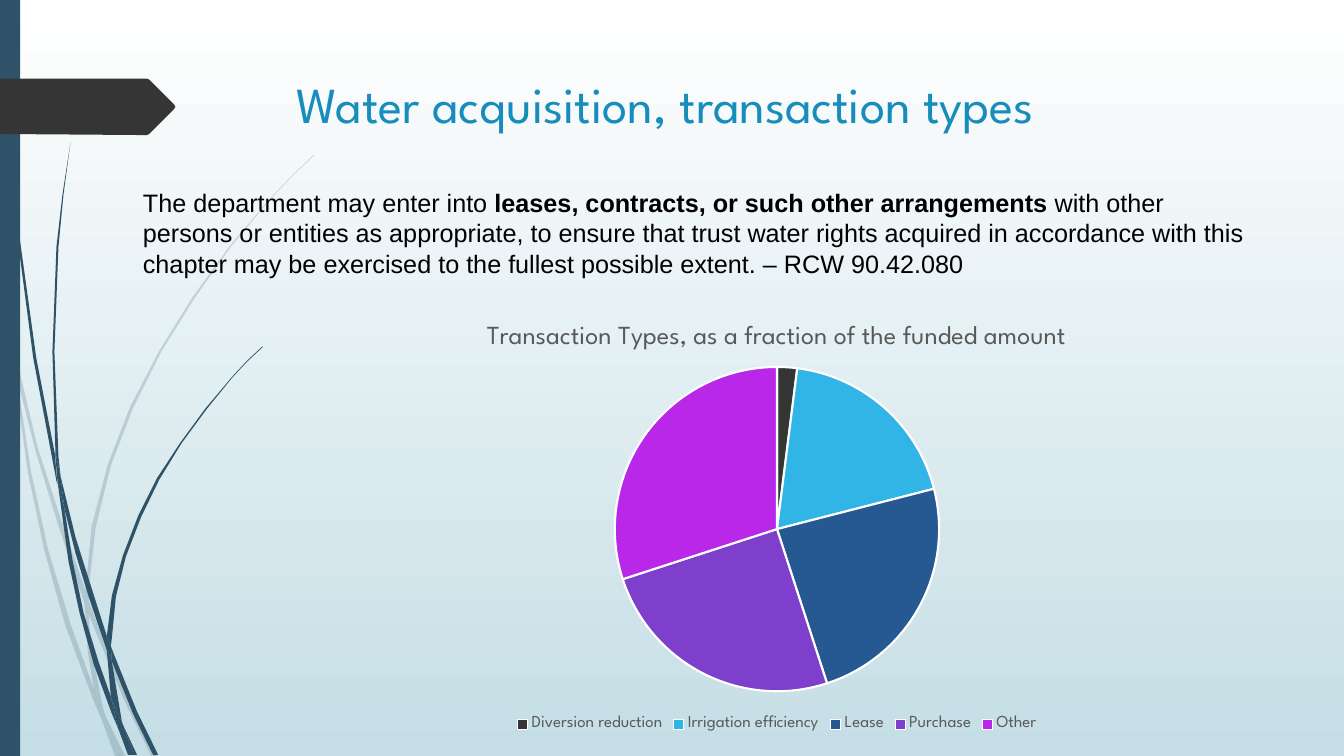
from pptx import Presentation
from pptx.chart.data import CategoryChartData
from pptx.dml.color import RGBColor
from pptx.enum.chart import XL_CHART_TYPE, XL_LEGEND_POSITION
from pptx.enum.shapes import MSO_SHAPE
from pptx.enum.text import MSO_ANCHOR
from pptx.oxml import parse_xml
from pptx.oxml.ns import nsdecls
from pptx.util import Pt

WHITE = RGBColor(0xFF, 0xFF, 0xFF)
BLACK = RGBColor(0, 0, 0)
MIST = RGBColor(0xC5, 0xDE, 0xE5)
SLATE = RGBColor(0x2E, 0x53, 0x69)
CHARCOAL = RGBColor(0x35, 0x35, 0x35)
TITLE_BLUE = RGBColor(0x17, 0x8D, 0xBB)
CHART_GREY = RGBColor(0x59, 0x59, 0x59)

HEADING_FONT = "League Spartan"
BODY_FONT = "Arial"
WIDTH, HEIGHT = Pt(960), Pt(540)
UNIT = Pt(0.72)  # outlines are drawn on a grid of 1000 x 750 units per 10 x 7.5 inches

TITLE_FORMAT = {"size": Pt(36), "name": HEADING_FONT}
BODY_FORMAT = {"size": Pt(18), "name": BODY_FONT}
CHART_TITLE_FORMAT = {"size": Pt(18.6), "name": HEADING_FONT, "bold": False}
LEGEND_FORMAT = {"size": Pt(12), "name": HEADING_FONT}

SLICES = [
    ("Diversion reduction", 2, CHARCOAL),
    ("Irrigation efficiency", 19, RGBColor(0x31, 0xB4, 0xE6)),
    ("Lease", 24, RGBColor(0x26, 0x59, 0x91)),
    ("Purchase", 25, RGBColor(0x7E, 0x40, 0xCC)),
    ("Other", 30, RGBColor(0xB9, 0x27, 0xE9)),
]

PALE_BLADES = [
    [(11, 350), (9, 322), (0, 282), (0, 299), (10, 344)],
    [(58, 522), (84, 599), (85, 586), (62, 520), (37, 443), (14, 345), (17, 376), (36, 450)],
    [(92, 607), (88, 596), (88, 610), (123, 694), (150, 750), (155, 750), (127, 692)],
    [(119, 750), (124, 750), (105, 711)],
    [(93, 683), (70, 619), (48, 546), (31, 469), (17, 376), (11, 350), (28, 470),
     (44, 546), (65, 621), (92, 693), (101, 714), (99, 707)],
    [(84, 599), (87, 646), (93, 683), (96, 692), (105, 711), (103, 706), (91, 646),
     (88, 610), (88, 608)],
    [(88, 584), (95, 523), (110, 462), (132, 405), (160, 349), (193, 296), (229, 245),
     (268, 198), (290, 175), (312, 154), (312, 153), (289, 175), (268, 197), (228, 244),
     (191, 295), (158, 348), (129, 404), (107, 461), (91, 522), (85, 584), (85, 586),
     (88, 596)],
    [(101, 714), (114, 750), (119, 750)],
    [(88, 608), (88, 596), (85, 586), (84, 599)],
    [(96, 692), (93, 683), (99, 707), (101, 714), (119, 750), (105, 711)],
]

DARK_BLADES = [
    [(7, 110), (17, 233), (33, 355), (56, 477), (57, 481), (55, 457), (55, 453), (36, 355),
     (19, 232), (8, 109), (5, 48), (4, 0), (3, 0), (4, 48)],
    [(88, 592), (106, 645), (106, 631), (93, 590), (75, 533), (60, 472), (64, 505), (75, 549)],
    [(113, 649), (110, 641), (111, 656), (132, 708), (152, 749), (157, 749), (136, 706)],
    [(110, 691), (98, 657), (83, 608), (72, 556), (64, 505), (57, 477), (68, 557), (79, 608),
     (93, 659), (111, 708), (117, 722), (116, 717)],
    [(60, 472), (58, 453), (54, 349), (58, 245), (63, 193), (70, 141), (62, 193),
     (56, 245), (52, 349), (55, 449)],
    [(133, 749), (136, 749), (122, 719)],
    [(57, 477), (64, 505), (60, 472), (55, 449), (55, 453)],
    [(111, 633), (115, 592), (125, 552), (140, 513), (158, 476), (180, 440), (205, 406),
     (231, 374), (245, 359), (261, 344), (260, 344), (245, 358), (231, 373), (204, 405),
     (179, 439), (156, 474), (137, 512), (122, 551), (111, 591), (106, 631), (110, 641)],
    [(117, 722), (127, 749), (131, 749)],
    [(106, 645), (110, 691), (116, 706), (122, 719), (121, 716), (111, 656), (109, 651)],
    [(106, 645), (109, 651), (111, 656), (110, 641), (106, 631)],
    [(116, 706), (110, 691), (116, 717), (117, 722), (130, 749), (133, 749), (122, 719)],
]

ARROW_TAG = [(173, 108), (148, 133), (146, 134), (136, 134), (0, 133), (0, 78), (136, 78),
             (146, 78), (148, 79), (173, 104), (174, 106)]


def apply_format(font, values, color):
    for name, value in values.items():
        setattr(font, name, value)
    font.color.rgb = color


def paint(shape, color, opacity=100):
    shape.shadow.inherit = False
    shape.fill.solid()
    shape.fill.fore_color.rgb = color
    shape.line.fill.background()
    if opacity < 100:
        color_element = shape.fill._xPr.solidFill[0]
        color_element.append(parse_xml(f'<a:alpha {nsdecls("a")} val="{opacity * 1000}"/>'))


def add_outline(shapes, points, color, opacity=100):
    builder = shapes.build_freeform(*points[0], scale=UNIT)
    builder.add_line_segments(points[1:], close=True)
    paint(builder.convert_to_shape(), color, opacity)


def add_background(slide):
    fill = slide.background.fill
    fill.gradient()
    fill.gradient_angle = 270
    for stop, color, position in zip(fill.gradient_stops, (WHITE, MIST), (0, 1)):
        stop.color.rgb = color
        stop.position = position


def add_decoration(slide):
    # Grass blades, pale ones behind
    for blades, opacity in ((PALE_BLADES, 20), (DARK_BLADES, 100)):
        group = slide.shapes.add_group_shape()
        for points in blades:
            add_outline(group.shapes, points, SLATE, opacity)
    # Side band and arrow tag
    band = slide.shapes.add_shape(MSO_SHAPE.RECTANGLE, 0, 0, Pt(14.4), HEIGHT)
    paint(band, SLATE)
    add_outline(slide.shapes, ARROW_TAG, CHARCOAL)


def add_text(slide, box, runs, values, color):
    frame = slide.shapes.add_textbox(*box).text_frame
    frame.word_wrap = True
    frame.vertical_anchor = MSO_ANCHOR.TOP
    for text, bold in runs:
        run = frame.paragraphs[0].add_run()
        run.text = text
        apply_format(run.font, values | {"bold": bold}, color)


def add_transaction_pie(slide, box):
    names, values, colors = zip(*SLICES)
    data = CategoryChartData()
    data.categories = names
    data.add_series("Series 1", values)
    chart = slide.shapes.add_chart(XL_CHART_TYPE.PIE, *box, data).chart
    apply_format(chart.font, {"size": Pt(10), "name": HEADING_FONT}, BLACK)

    # Title
    chart.has_title = True
    paragraph = chart.chart_title.text_frame.paragraphs[0]
    run = paragraph.add_run()
    run.text = "Transaction Types, as a fraction of the funded amount"
    apply_format(run.font, CHART_TITLE_FORMAT, CHART_GREY)
    chart.chart_title.include_in_layout = False

    # Legend
    chart.has_legend = True
    chart.legend.position = XL_LEGEND_POSITION.BOTTOM
    chart.legend.include_in_layout = False
    apply_format(chart.legend.font, LEGEND_FORMAT, CHART_GREY)

    # Slices
    plot = chart.plots[0]
    plot.vary_by_categories = True
    for index, color in enumerate(colors):
        style = plot.series[0].points[index].format
        style.fill.solid()
        style.fill.fore_color.rgb = color
        style.line.color.rgb = WHITE
        style.line.width = Pt(1.5)

    # Plot position as fractions of the chart box
    plot_area = chart._chartSpace.chart.plotArea
    for layout in plot_area.findall("{*}layout"):
        plot_area.remove(layout)
    fractions = {"x": 0.335, "y": 0.147, "w": 0.33, "h": 0.75}
    parts = "".join(f'<c:{key} val="{value}"/>' for key, value in fractions.items())
    plot_area.insert(0, parse_xml(
        f'<c:layout {nsdecls("c")}><c:manualLayout><c:layoutTarget val="inner"/>'
        f'<c:xMode val="edge"/><c:yMode val="edge"/>{parts}</c:manualLayout></c:layout>'))


def main():
    presentation = Presentation()
    presentation.slide_width, presentation.slide_height = WIDTH, HEIGHT
    slide = presentation.slides.add_slide(presentation.slide_layouts[6])
    add_background(slide)
    add_decoration(slide)
    add_text(slide, (Pt(204.5), Pt(49), Pt(702), Pt(101)),
             [("Water acquisition, transaction types", False)], TITLE_FORMAT, TITLE_BLUE)
    add_transaction_pie(slide, (Pt(204), Pt(216.7), Pt(702), Pt(309)))
    add_text(slide, (Pt(95), Pt(130.3), Pt(802), Pt(72.7)), [
        ("The department may enter into ", False),
        ("leases, contracts, or such other arrangements ", True),
        ("with other persons or entities as appropriate, to ensure that trust water rights "
         "acquired in accordance with this chapter may be exercised to the fullest possible "
         "extent. – RCW 90.42.080", False),
    ], BODY_FORMAT, BLACK)
    presentation.save("out.pptx")


if __name__ == "__main__":
    main()
